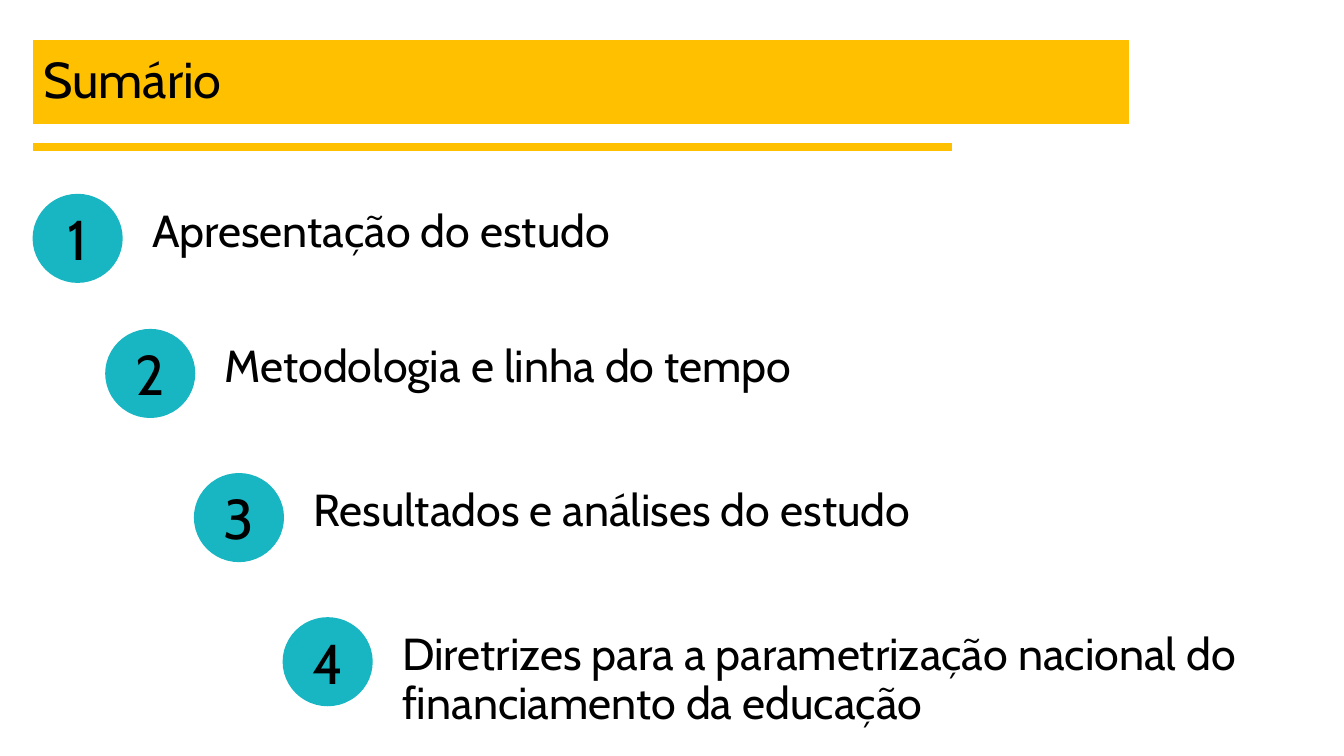
from pptx import Presentation
from pptx import util as u
from pptx.dml.color import RGBColor
from pptx.enum import shapes, text
from pptx.oxml.ns import qn
from lxml import etree

GOLD = RGBColor(0xFF, 0xC0, 0x00)
TEAL = RGBColor(0x18, 0xB6, 0xC2)
BLACK = RGBColor(0, 0, 0)
FONT = "Cabin"

# Label, left and top of the circle, width of the label
TOPICS = [
    ("Apresentação do estudo", 0.33, 1.93, 5.38),
    ("Metodologia e linha do tempo", 1.05, 3.27, 9.06),
    ("Resultados e análises do estudo", 1.93, 4.7, 6.96),
    ("Diretrizes para a parametrização nacional do financiamento da educação",
     2.81, 6.13, 8.72),
]


def write(frame, words, size, align=text.PP_ALIGN.LEFT):
    frame.word_wrap = True
    para = frame.paragraphs[0]
    para.alignment = align
    run = para.add_run()
    run.text = words
    run.font.name = FONT
    run.font.size = u.Pt(size)
    run.font.color.rgb = BLACK
    return para


def add_form(slide, kind, box, color, edge):
    form = slide.shapes.add_shape(kind, *map(u.Inches, box))
    form.shadow.inherit = False
    form.fill.solid()
    form.fill.fore_color.rgb = color
    form.line.color.rgb = color
    form.line.width = u.Pt(edge)
    form.text_frame.vertical_anchor = text.MSO_ANCHOR.MIDDLE
    return form


def add_header(slide, left, top, width, height):
    # Rule below the title bar
    rule_y = u.Inches(top + height + 0.23)
    rule = slide.shapes.add_connector(
        shapes.MSO_CONNECTOR.STRAIGHT,
        u.Inches(left), rule_y, u.Inches(left + 9.11), rule_y)
    rule.line.color.rgb = GOLD
    rule.line.width = u.Pt(6)
    etree.SubElement(rule._element.spPr, qn("a:effectLst"))

    # Title bar
    bar = add_form(slide, shapes.MSO_SHAPE.RECTANGLE,
                   (left, top, width, height), GOLD, 0.75)
    write(bar.text_frame, "Sumário", 36).line_spacing = 0.9


def add_topic(slide, number, label, left, top, width):
    # Label
    box = slide.shapes.add_textbox(
        *map(u.Inches, (left + 1.08, top + 0.09, width, 0.69)))
    para = write(box.text_frame, label, 32)
    para.line_spacing = 0.9
    para.space_before = para.space_after = u.Pt(18)

    # Numbered circle
    disc = add_form(slide, shapes.MSO_SHAPE.OVAL,
                    (left, top, 0.88, 0.87), TEAL, 1)
    frame = disc.text_frame
    frame.margin_left = frame.margin_right = 0
    frame.margin_top = frame.margin_bottom = 0
    write(frame, str(number), 40, text.PP_ALIGN.CENTER)


def main():
    deck = Presentation()
    deck.slide_width = u.Inches(13.33)
    deck.slide_height = u.Inches(7.5)
    slide = deck.slides.add_slide(deck.slide_layouts[6])

    add_header(slide, 0.33, 0.4, 10.86, 0.83)
    for number, topic in enumerate(TOPICS, 1):
        add_topic(slide, number, *topic)

    deck.save("out.pptx")


if __name__ == "__main__":
    main()
